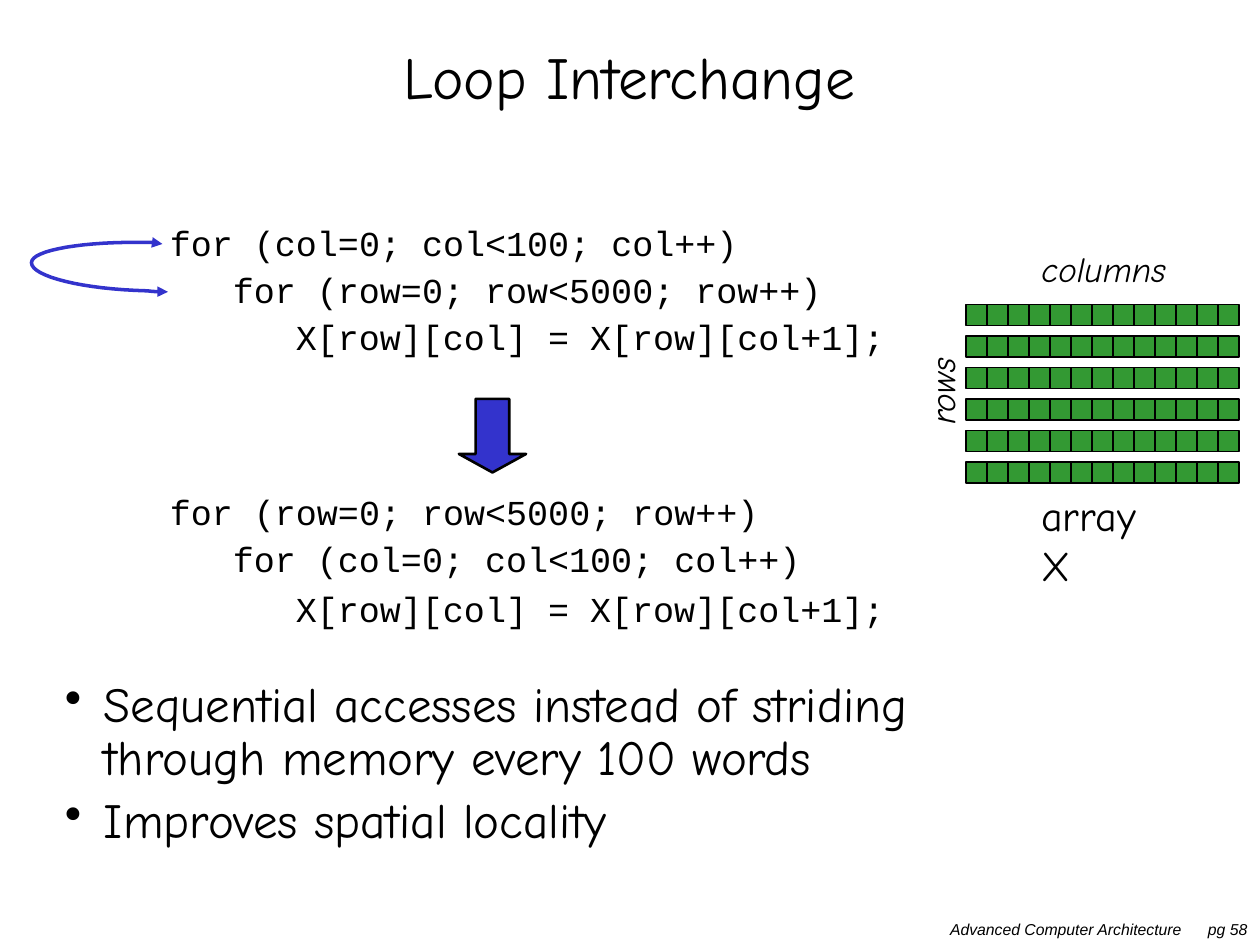
from pptx import Presentation
from pptx.dml.color import RGBColor
from pptx.enum.shapes import MSO_SHAPE
from pptx.enum.text import MSO_ANCHOR, PP_ALIGN
from pptx.oxml.ns import qn
from pptx.util import Inches, Pt
from lxml import etree

RECTANGLE, DOWN_ARROW = MSO_SHAPE.RECTANGLE, MSO_SHAPE.DOWN_ARROW
LEFT, CENTER = PP_ALIGN.LEFT, PP_ALIGN.CENTER
TOP, MIDDLE = MSO_ANCHOR.TOP, MSO_ANCHOR.MIDDLE

# The slide is a grid of 120 columns by 90 rows
WIDTH, HEIGHT = Inches(10), Inches(7.5)
UNIT = WIDTH / 120

BLACK, BLUE, GREEN = "000000", "3333CC", "339933"
HAND, CODE, SANS = "Comic Neue", "Courier New", "Arial"


def color(value):
    return RGBColor.from_string(value)


def grid(*lengths):
    return [round(length * UNIT) for length in lengths]


def set_values(target, values):
    for name, value in values.items():
        setattr(target, name, value)


def add_text(slide, box, lines, font, size, italic=False, wrap=True,
             anchor=TOP, **paragraph_format):
    """Place one paragraph per line and return the text box."""
    shape = slide.shapes.add_textbox(*grid(*box))
    frame = shape.text_frame
    set_values(frame, {"word_wrap": wrap, "vertical_anchor": anchor})
    for index, line in enumerate(lines):
        paragraph = frame.paragraphs[0] if index == 0 else frame.add_paragraph()
        set_values(paragraph, {"alignment": LEFT, **paragraph_format})
        run = paragraph.add_run()
        run.text = line
        set_values(run.font, {"name": font, "size": Pt(size), "italic": italic})
        run.font.color.rgb = color(BLACK)
    return shape


def add_block(slide, kind, box, fill, line_width):
    shape = slide.shapes.add_shape(kind, *grid(*box))
    shape.shadow.inherit = False
    shape.fill.solid()
    shape.fill.fore_color.rgb = color(fill)
    shape.line.color.rgb = color(BLACK)
    shape.line.width = Pt(line_width)
    return shape


def add_title(slide, box):
    add_text(slide, box, ["Loop Interchange"], HAND, 34, anchor=MIDDLE,
             alignment=CENTER, line_spacing=0.8)


def add_code(slide, box, lines):
    """Each line of the loop nest is indented one step further."""
    shape = add_text(slide, box, lines, CODE, 20,
                     line_spacing=0.9, space_before=Pt(5))
    for level, paragraph in enumerate(shape.text_frame.paragraphs):
        paragraph._p.get_or_add_pPr().set("marL", str(Inches(0.5) * level))
    return shape


def add_bullets(slide, box, lines):
    shape = add_text(slide, box, lines, HAND, 28,
                     line_spacing=0.9, space_before=Pt(5.6))
    indent = Inches(0.31)
    for paragraph in shape.text_frame.paragraphs:
        properties = paragraph._p.get_or_add_pPr()
        properties.set("marL", str(indent))
        properties.set("indent", str(-indent))
        etree.SubElement(properties, qn("a:buChar")).set("char", "•")


def bezier(start, first, second, end, steps=16):
    """Points on a cubic curve, without its start."""
    for step in range(1, steps + 1):
        t = step / steps
        weights = ((1 - t) ** 3, 3 * t * (1 - t) ** 2, 3 * t ** 2 * (1 - t), t ** 3)
        yield tuple(sum(weight * point[axis] for weight, point
                        in zip(weights, (start, first, second, end)))
                    for axis in (0, 1))


def add_swap_curve(slide, box):
    """Double-headed arc; its control points are shares of the box."""
    left, top, width, height = grid(*box)
    controls = [(1, 1), (0.95, 1), (0.9, 1), (0.85, 0.98),
                (0.38, 0.95), (0, 0.69), (0, 0.41),
                (0, 0.15), (0.39, -0.03), (0.87, 0),
                (0.9, 0), (0.93, 0), (0.96, 0.03)]
    points = [(left + x * width, top + y * height) for x, y in controls]
    builder = slide.shapes.build_freeform(*points[0])
    for index in range(0, len(points) - 1, 3):
        builder.add_line_segments(bezier(*points[index:index + 4]), close=False)
    curve = builder.convert_to_shape()
    curve.shadow.inherit = False
    curve.fill.background()
    curve.line.color.rgb = color(BLUE)
    curve.line.width = Pt(2)
    outline = curve.line._get_or_add_ln()
    for end in ("a:headEnd", "a:tailEnd"):
        etree.SubElement(outline, qn(end)).set("type", "triangle")


def add_array(slide, box, rows=6, columns=13):
    """Rows of touching cells, with a gap of half a cell between rows."""
    left, top, width, height = box
    cell = width / columns
    pitch = (height - cell) / (rows - 1)
    for row in range(rows):
        for column in range(columns):
            add_block(slide, RECTANGLE,
                      (left + column * cell, top + row * pitch, cell, cell),
                      GREEN, 0.75)
    # Labels around the cells
    rows_label = add_text(slide, (left - 6.8, top + 5.6, 8.9, 5.2), ["rows"],
                          HAND, 20, italic=True, wrap=False)
    rows_label.rotation = 270
    add_text(slide, (left + 6, top - 6, 15.6, 5.2), ["columns"],
             HAND, 20, italic=True, wrap=False)
    add_text(slide, (left + 6, top + height, 13, 10), ["array X"], HAND, 24)


def add_footer(slide, box):
    shape = add_text(slide, box, ["Advanced Computer Architecture\tpg 58"],
                     SANS, 9, italic=True)
    properties = shape.text_frame.paragraphs[0]._p.get_or_add_pPr()
    tab = etree.SubElement(etree.SubElement(properties, qn("a:tabLst")), qn("a:tab"))
    tab.set("pos", str(Inches(2.36)))
    tab.set("algn", "r")


def main():
    presentation = Presentation()
    set_values(presentation, {"slide_width": WIDTH, "slide_height": HEIGHT})
    slide = presentation.slides.add_slide(presentation.slide_layouts[6])

    outer, inner = "for (col=0; col<100; col++)", "for (row=0; row<5000; row++)"
    body = "X[row][col] = X[row][col+1];"

    add_footer(slide, (89.3, 87, 30.7, 3))
    add_title(slide, (3.84, 3, 112.2, 9.6))
    # Loops before and after the interchange
    add_code(slide, (15, 21, 72, 14), [outer, inner, body])
    swapped = add_code(slide, (15, 46.6, 72, 14), [inner, outer, body])
    swapped.text_frame.paragraphs[-1].space_before = Pt(7.3)
    add_swap_curve(slide, (3, 23.1, 13, 4.7))
    arrow = add_block(slide, DOWN_ARROW, (43.7, 38, 6.4, 7), BLUE, 1.5)
    arrow.adjustments[0], arrow.adjustments[1] = 0.5, 0.275
    add_bullets(slide, (5, 64.2, 94, 18), [
        "Sequential accesses instead of striding through memory every 100 words",
        "Improves spatial locality"])
    add_array(slide, (92, 29, 26, 17))
    presentation.save("out.pptx")


if __name__ == "__main__":
    main()
